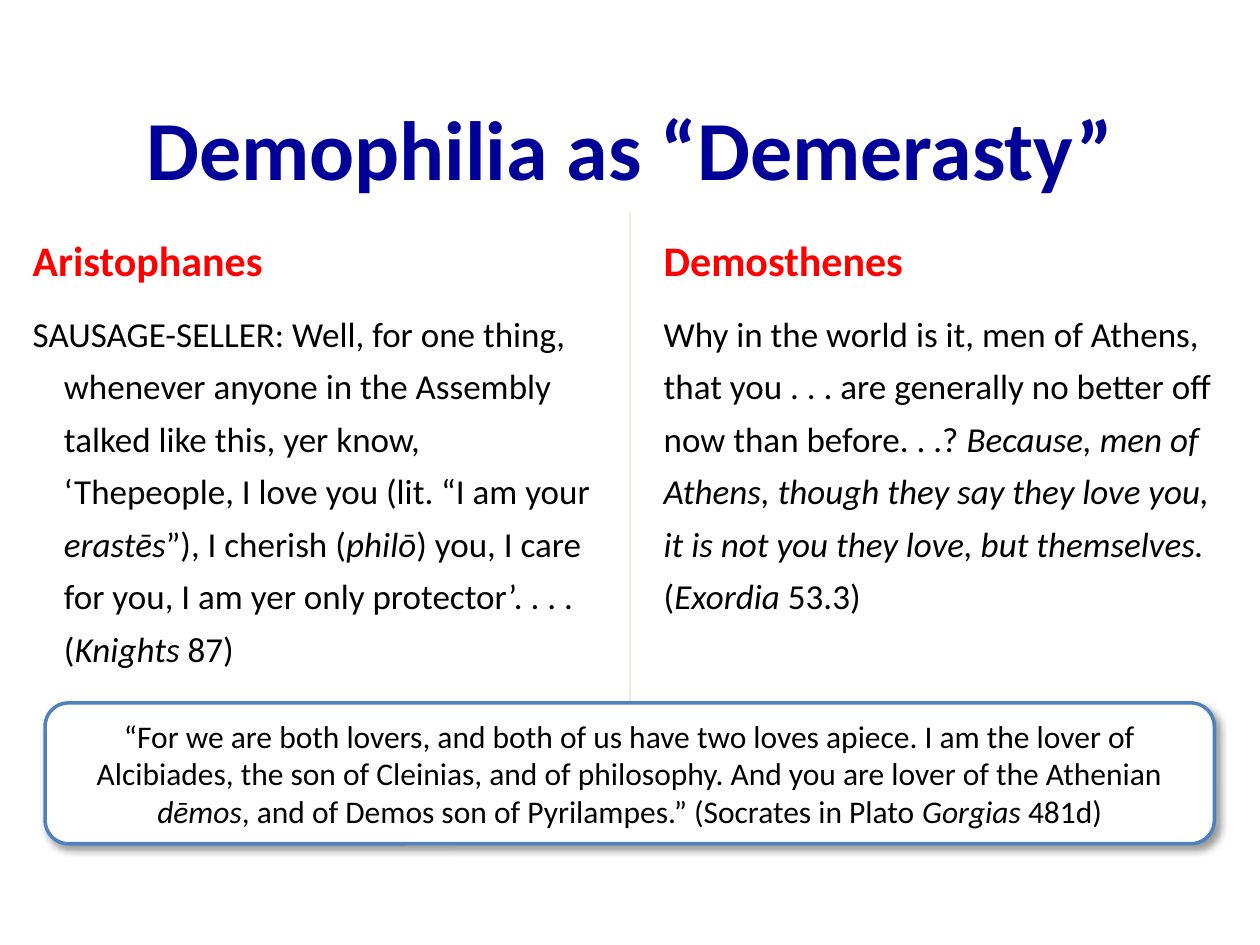
"""Build the slide comparing Aristophanes and Demosthenes on love of the people."""
from dataclasses import dataclass
from typing import Any

import lxml.etree
import pptx
import pptx.dml.color
import pptx.enum.shapes
import pptx.enum.text
import pptx.oxml
import pptx.oxml.ns
import pptx.util

Cm = pptx.util.Cm
Pt = pptx.util.Pt
Align = pptx.enum.text.PP_ALIGN
Anchor = pptx.enum.text.MSO_ANCHOR

COLOURS = {
    "title": "000099",
    "heading": "FF0000",
    "text": "000000",
    "divider": "EEECE1",
    "box_line": "4F81BD",
    "box_fill": "FFFFFF",
}
FONT = "Calibri"
COLUMN_TOP = 4.34
COLUMN_WIDTH = 11.84


@dataclass
class Passage:
    """Text whose pieces alternate between upright and italic."""

    pieces: list[str]
    size: int
    colour: str
    bold: bool = False


@dataclass
class Column:
    """A headed quotation at a left edge and with a hanging indent, in centimetres."""

    left: float
    height: float
    heading: str
    quotation: list[str]
    hanging: float = 0


COLUMNS = [
    Column(
        0.41,
        9.45,
        "Aristophanes",
        [
            "SAUSAGE-SELLER: Well, for one thing, whenever anyone in the Assembly "
            "talked like this, yer know, ‘Thepeople, I love you (lit. “I am your ",
            "erastēs",
            "”), I cherish (",
            "philō",
            ") you, I care for you, I am yer only protector’. . . . (",
            "Knights",
            " 87)",
        ],
        hanging=0.63,
    ),
    Column(
        13.13,
        8.38,
        "Demosthenes",
        [
            "Why in the world is it, men of Athens, that you . . . are generally "
            "no better off now than before. . .? ",
            "Because, men of Athens, though they say they love you, "
            "it is not you they love, but themselves. ",
            "(",
            "Exordia",
            " 53.3)",
        ],
    ),
]
TITLE = Passage(["Demophilia as “Demerasty”"], 48, "title", True)
SOCRATES = Passage(
    [
        "“For we are both lovers, and both of us have two loves apiece. I am the "
        "lover of Alcibiades, the son of Cleinias, and of philosophy. And you are "
        "lover of the Athenian ",
        "dēmos",
        ", and of Demos son of Pyrilampes.” (Socrates in Plato ",
        "Gorgias",
        " 481d)",
    ],
    18,
    "text",
)


def rgb(name: str) -> pptx.dml.color.RGBColor:
    """Return the named colour."""
    return pptx.dml.color.RGBColor.from_string(COLOURS[name])


def apply_format(target: Any, values: dict[str, Any]) -> None:
    """Set each attribute of the target from the format values."""
    for name, value in values.items():
        setattr(target, name, value)


def write_passage(paragraph: Any, passage: Passage, values: dict[str, Any]) -> None:
    """Fill a paragraph with the alternating runs of a passage."""
    apply_format(paragraph, values)
    for index, piece in enumerate(passage.pieces):
        run = paragraph.add_run()
        run.text = piece
        apply_format(
            run.font,
            {
                "name": FONT,
                "size": Pt(passage.size),
                "bold": passage.bold,
                "italic": index % 2 == 1,
            },
        )
        run.font.color.rgb = rgb(passage.colour)


def add_column(slide: Any, column: Column) -> None:
    """Draw a heading with its quotation below."""
    shape = slide.shapes.add_textbox(
        Cm(column.left), Cm(COLUMN_TOP), Cm(COLUMN_WIDTH), Cm(column.height)
    )
    frame = shape.text_frame
    frame.word_wrap = True
    heading = Passage([column.heading], 24, "heading", True)
    quotation = Passage(column.quotation, 20, "text")
    paragraphs = [frame.paragraphs[0], frame.add_paragraph()]
    for paragraph, passage in zip(paragraphs, [heading, quotation]):
        spacing = {"line_spacing": 1.25, "space_before": Pt(passage.size / 2)}
        write_passage(paragraph, passage, spacing)
    if column.hanging:
        properties = paragraphs[1]._p.get_or_add_pPr()
        properties.set("marL", str(Cm(column.hanging)))
        properties.set("indent", str(-Cm(column.hanging)))


def write_centred(shape: Any, passage: Passage) -> None:
    """Write a passage in the middle of a shape."""
    frame = shape.text_frame
    apply_format(frame, {"word_wrap": True, "vertical_anchor": Anchor.MIDDLE})
    write_passage(frame.paragraphs[0], passage, {"alignment": Align.CENTER})


def add_divider(slide: Any) -> None:
    """Draw the vertical rule between the columns."""
    line = slide.shapes.add_connector(
        pptx.enum.shapes.MSO_CONNECTOR.STRAIGHT, Cm(12.7), Cm(4.27), Cm(12.7), Cm(14.81)
    )
    line.line.color.rgb = rgb("divider")
    line.line.width = Pt(0.75)
    lxml.etree.SubElement(line._element.spPr, pptx.oxml.ns.qn("a:effectLst"))


def add_quotation_box(slide: Any) -> None:
    """Draw the rounded box with its soft shadow."""
    box = slide.shapes.add_shape(
        pptx.enum.shapes.MSO_SHAPE.ROUNDED_RECTANGLE,
        Cm(0.91), Cm(14.17), Cm(23.57), Cm(2.84),
    )
    box.fill.solid()
    box.fill.fore_color.rgb = rgb("box_fill")
    box.line.color.rgb = rgb("box_line")
    box.line.width = Pt(2)
    box.shadow.inherit = False
    effects = box._element.spPr.find(pptx.oxml.ns.qn("a:effectLst"))
    effects.append(
        pptx.oxml.parse_xml(
            f'<a:outerShdw {pptx.oxml.ns.nsdecls("a")} blurRad="{Pt(4)}" '
            f'dist="{Pt(3)}" dir="{45 * 60000}" algn="tl" rotWithShape="0">'
            f'<a:srgbClr val="{COLOURS["text"]}"><a:alpha val="40000"/></a:srgbClr>'
            "</a:outerShdw>"
        )
    )
    write_centred(box, SOCRATES)


def main() -> None:
    """Build and save the presentation."""
    presentation = pptx.Presentation()
    apply_format(presentation, {"slide_width": Cm(25.4), "slide_height": Cm(19.05)})
    slide = presentation.slides.add_slide(presentation.slide_layouts[6])
    for column in COLUMNS:
        add_column(slide, column)
    add_divider(slide)
    title = slide.shapes.add_textbox(Cm(1.27), Cm(1.37), Cm(22.86), Cm(3.18))
    write_centred(title, TITLE)
    add_quotation_box(slide)
    presentation.save("out.pptx")


if __name__ == "__main__":
    main()
